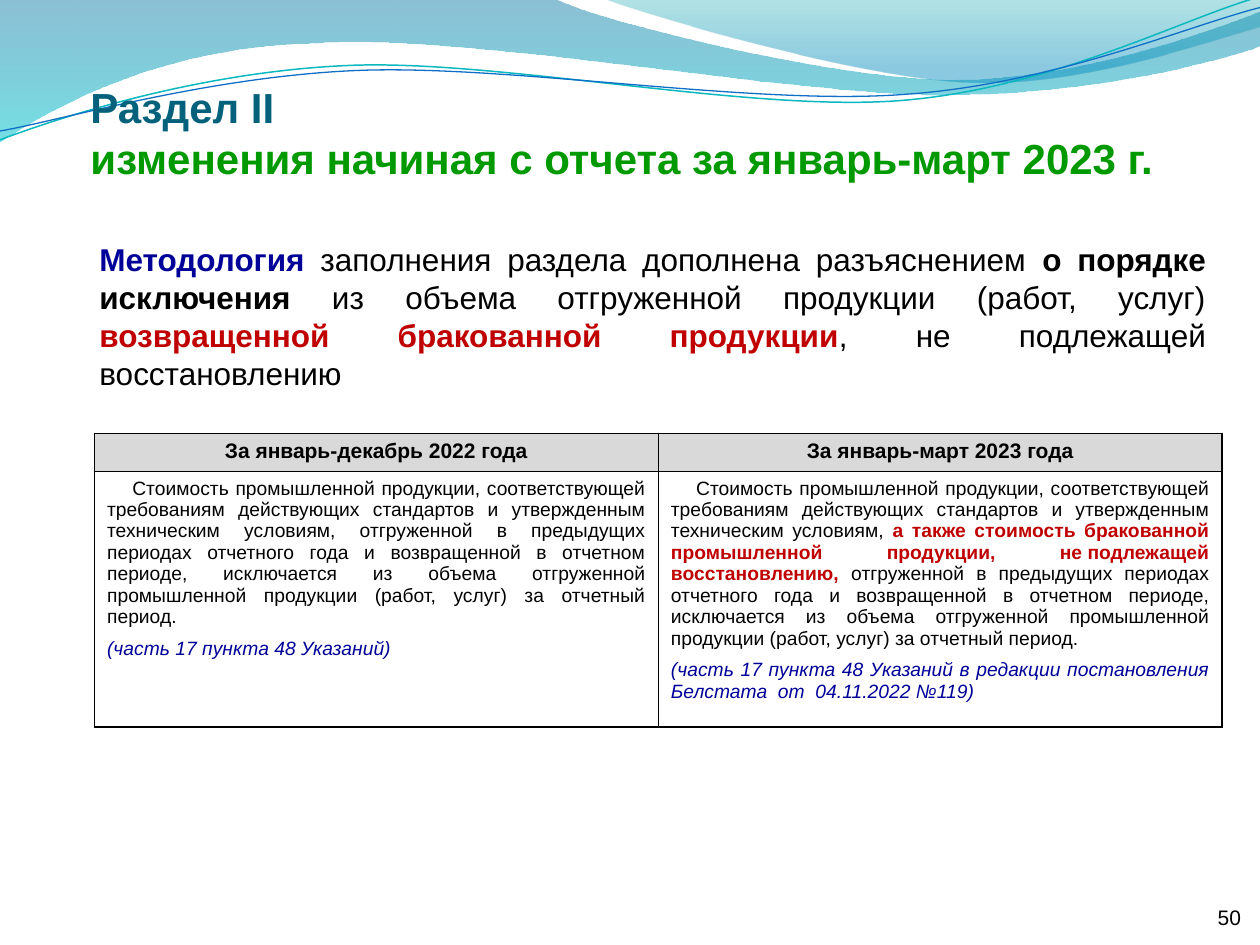
from lxml.etree import SubElement
from pptx import Presentation
from pptx.dml.color import RGBColor
from pptx.enum.text import MSO_ANCHOR as Anchor, PP_ALIGN as Align
from pptx.oxml.ns import qn
from pptx.util import Inches, Pt

BLACK, NAVY, RED, GREEN, TEAL = "000000", "000099", "C00000", "009900", "04617B"

BROAD_WAVE = [
    (0, 0), (4.4, -0.01), (4.76, 0.17, 6.64, 0.63, 7.58, 0.63),
    (8.53, 0.63, 9.58, 0.26, 10, 0.09), (10.01, 0.36),
    (9.83, 0.44, 8.7, 0.76, 7.46, 0.75), (6.22, 0.75, 3.82, 0.28, 2.57, 0.34),
    (1.29, 0.36, 0.46, 0.83, -0.01, 1.13),
]
RIGHT_WAVE = [
    (4.79, -0.01), (5.09, 0.11, 6.82, 0.62, 7.69, 0.65),
    (8.56, 0.69, 9.61, 0.32, 10, 0.21), (10, 0),
]
TEAL_STRAND = [
    (0, 1.11), (0.48, 0.93, 1.58, 0.57, 2.77, 0.52),
    (3.95, 0.47, 5.93, 0.89, 7.13, 0.8), (8.33, 0.71, 9.38, 0.15, 9.98, -0.02),
]
BLUE_STRAND = [
    (0, 1.04), (0.47, 0.96, 1.64, 0.61, 2.83, 0.56),
    (4.03, 0.51, 5.97, 0.84, 7.17, 0.75), (8.36, 0.67, 9.41, 0.21, 10, 0.06),
]

HARD_SPACE = chr(160)
STANDARD = ("Стоимость промышленной продукции, соответствующей требованиям действующих "
            "стандартов и утвержденным техническим условиям, ")
EXCLUSION = ("отгруженной в предыдущих периодах отчетного года и возвращенной в отчетном периоде, "
             "исключается из объема отгруженной промышленной продукции (работ, услуг) "
             "за отчетный период.")
DEFECTIVE = ("а также стоимость бракованной промышленной продукции, "
             f"не{HARD_SPACE}подлежащей восстановлению, ")


def color(value):
    return RGBColor.from_string(value)


def apply(target, values):
    for name, value in values.items():
        setattr(target, name, value)


def write_para(para, spans, size, layout, indent=0):
    apply(para, layout)
    if indent:
        properties = para._p.get_or_add_pPr()
        properties.set("marL", "0")
        properties.set("indent", str(Inches(indent)))
    for text, hue, style in spans:
        span = para.add_run()
        span.text = text
        apply(span.font, {"name": "Arial", "size": Pt(size), "bold": False, **style})
        span.font.color.rgb = color(hue)


def add_text(page, area, paras, size, layout, frame_format):
    frame = page.shapes.add_textbox(*map(Inches, area)).text_frame
    apply(frame, {"word_wrap": True, **frame_format})
    for index, spans in enumerate(paras):
        para = frame.add_paragraph() if index else frame.paragraphs[0]
        write_para(para, spans, size, layout)


def add_curve(page, outline, closed):
    ends = [(Inches(step[-2]), Inches(step[-1])) for step in outline]
    builder = page.shapes.build_freeform(*ends[0])
    builder.add_line_segments(ends[1:], close=closed)
    shape = builder.convert_to_shape()
    shape.shadow.inherit = False
    segments = list(shape._element.iter(qn("a:lnTo")))
    for segment, step in zip(segments, outline[1:]):
        if len(step) == 6:
            segment.tag = qn("a:cubicBezTo")
            for index, (x, y) in enumerate((step[0:2], step[2:4])):
                point = segment.makeelement(qn("a:pt"), {
                    "x": str(Inches(x) - shape.left), "y": str(Inches(y) - shape.top)})
                segment.insert(index, point)
    return shape


def add_wave(page, outline, stops):
    shape = add_curve(page, outline, True)
    shape.line.fill.background()
    shape.fill.gradient()
    shape.fill.gradient_angle = 270
    for stop, (position, hue, opacity) in zip(shape.fill.gradient_stops, stops):
        stop.position = position
        stop.color.rgb = color(hue)
        hue_node = stop._gs.find(qn("a:srgbClr"))
        SubElement(hue_node, qn("a:alpha"), val=str(opacity * 1000))


def add_strand(page, outline, hue, width):
    shape = add_curve(page, outline, False)
    shape.fill.background()
    shape.line.color.rgb = color(hue)
    shape.line.width = Pt(width)


def add_waves(page):
    add_wave(page, BROAD_WAVE, [(0, "0074A1", 45), (1, "00C6CF", 55)])
    add_wave(page, RIGHT_WAVE, [(0, "00A1A9", 30), (0.8, "008BBF", 45)])
    add_strand(page, TEAL_STRAND, "0AB8BF", 0.85)
    add_strand(page, BLUE_STRAND, "0F6FC6", 0.75)


def add_title(page, area):
    bold = {"bold": True}
    lines = [[("Раздел II", TEAL, bold)],
             [("изменения начиная с отчета за январь-март 2023 г.", GREEN, bold)]]
    add_text(page, area, lines, 24, {}, {})


def add_summary(page, area):
    bold = {"bold": True}
    spans = [("Методология", NAVY, bold),
             (" заполнения раздела дополнена разъяснением ", BLACK, {}),
             ("о порядке исключения", BLACK, bold),
             (" из объема отгруженной продукции (работ, услуг) ", BLACK, {}),
             ("возвращенной бракованной продукции", RED, bold),
             (", не подлежащей восстановлению", BLACK, {})]
    add_text(page, area, [spans], 18, {"alignment": Align.JUSTIFY}, {})


def add_page_number(page, area):
    margins = {f"margin_{side}": 0 for side in ("left", "top", "right", "bottom")}
    add_text(page, area, [[("50", BLACK, {})]], 12, {"alignment": Align.RIGHT},
             {"vertical_anchor": Anchor.BOTTOM, **margins})


def style_cell(cell, fill=None):
    if fill:
        cell.fill.solid()
        cell.fill.fore_color.rgb = color(fill)
    else:
        cell.fill.background()
    properties = cell._tc.get_or_add_tcPr()
    for index, side in enumerate(("lnL", "lnR", "lnT", "lnB")):
        border = properties.makeelement(qn(f"a:{side}"), {"w": str(Pt(1))})
        properties.insert(index, border)
        SubElement(SubElement(border, qn("a:solidFill")), qn("a:srgbClr"), val=BLACK)


def add_comparison(page, area):
    columns = [
        ("За январь-декабрь 2022 года", [(STANDARD + EXCLUSION, BLACK, {})],
         "(часть 17 пункта 48 Указаний)"),
        ("За январь-март 2023 года",
         [(STANDARD, BLACK, {}), (DEFECTIVE, RED, {"bold": True}), (EXCLUSION, BLACK, {})],
         "(часть 17 пункта 48 Указаний в редакции постановления Белстата  от  04.11.2022 №119)"),
    ]
    table = page.shapes.add_table(2, len(columns), *map(Inches, area)).table
    header_height = 0.29
    table.rows[0].height = Inches(header_height)
    table.rows[1].height = Inches(area[3] - header_height)
    justified = {"alignment": Align.JUSTIFY}
    for index, (heading, rule, reference) in enumerate(columns):
        header, body = table.cell(0, index), table.cell(1, index)
        style_cell(header, "D9D9D9")
        style_cell(body)
        write_para(header.text_frame.paragraphs[0], [(heading, BLACK, {"bold": True})], 12,
                   {"alignment": Align.CENTER})
        write_para(body.text_frame.paragraphs[0], rule, 11, justified, indent=0.2)
        write_para(body.text_frame.add_paragraph(), [(reference, NAVY, {"italic": True})], 11,
                   {**justified, "space_before": Pt(6)})


def main():
    deck = Presentation()
    deck.slide_width, deck.slide_height = Inches(10), Inches(7.5)
    page = deck.slides.add_slide(deck.slide_layouts[6])
    add_waves(page)
    add_page_number(page, (9.02, 6.98, 0.83, 0.4))
    add_title(page, (0.62, 0.6, 9.13, 0.91))
    add_comparison(page, (0.75, 3.44, 8.95, 2.32))
    add_summary(page, (0.69, 1.86, 8.98, 1.34))
    deck.save("out.pptx")


if __name__ == "__main__":
    main()
